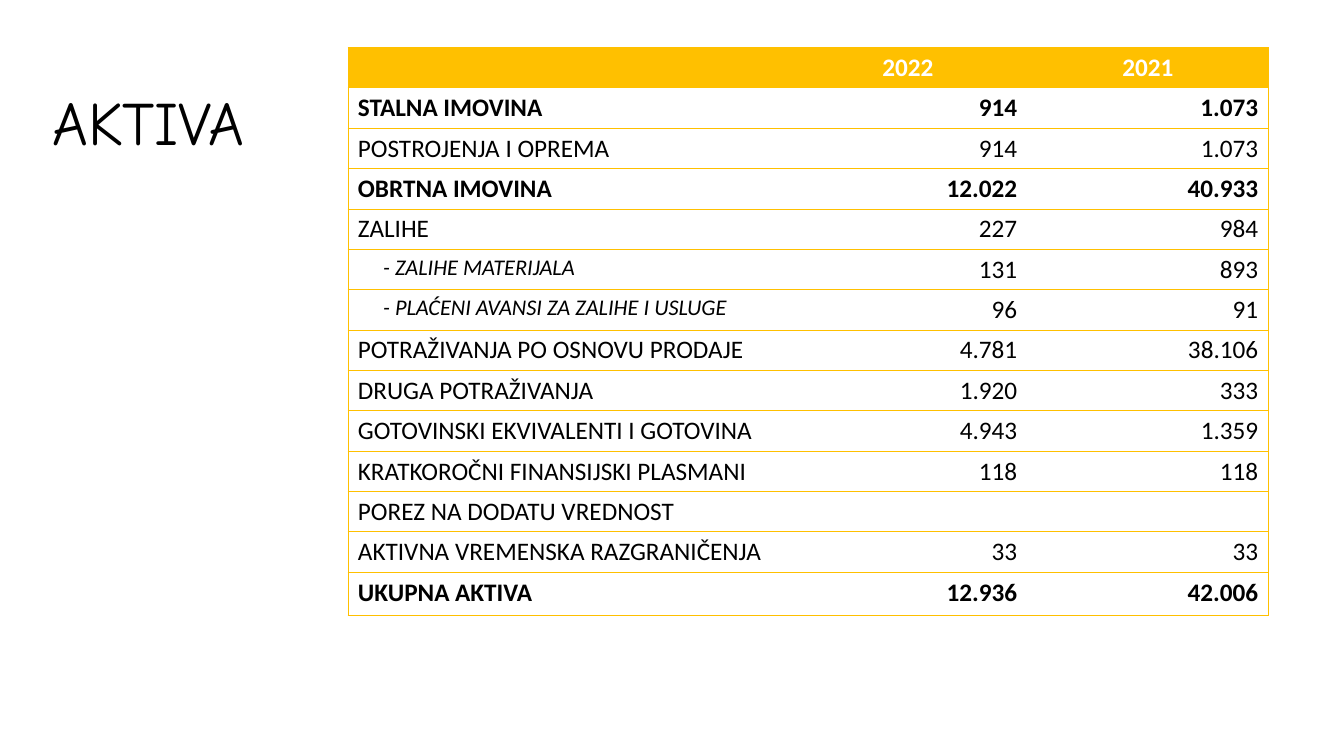
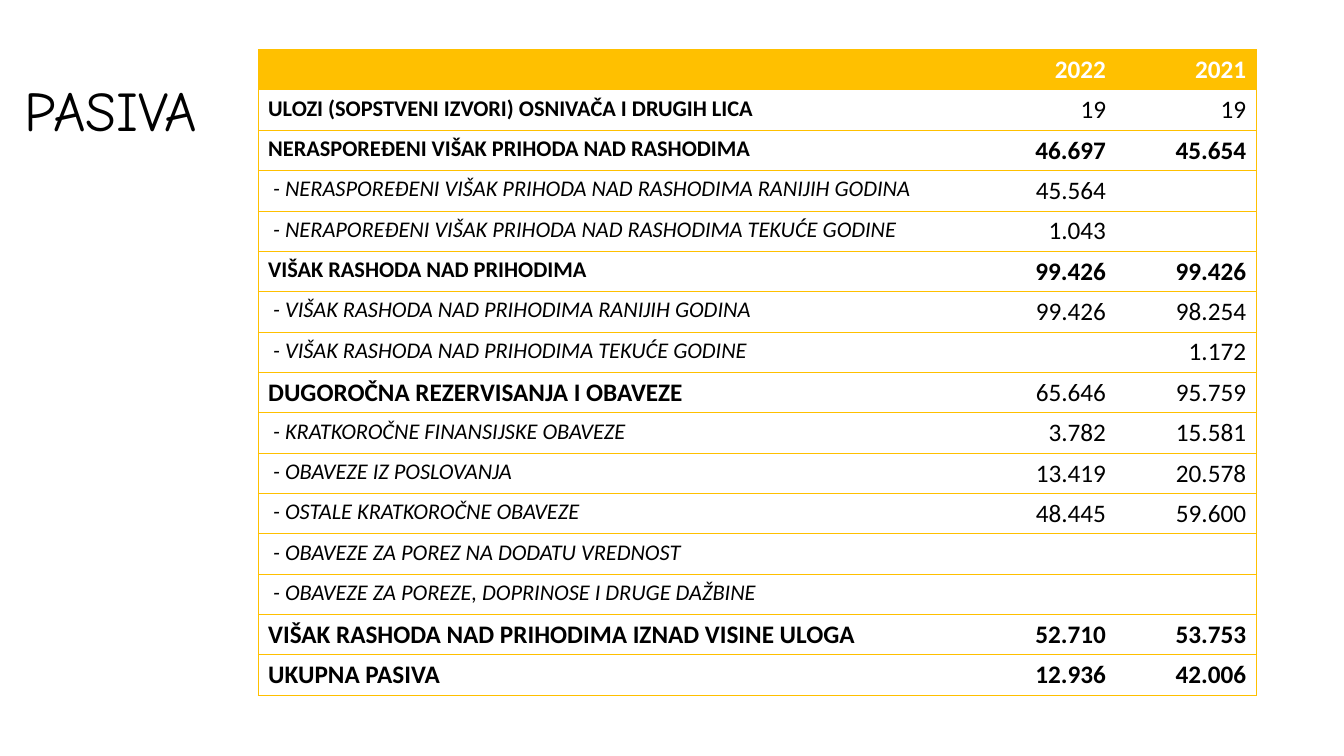
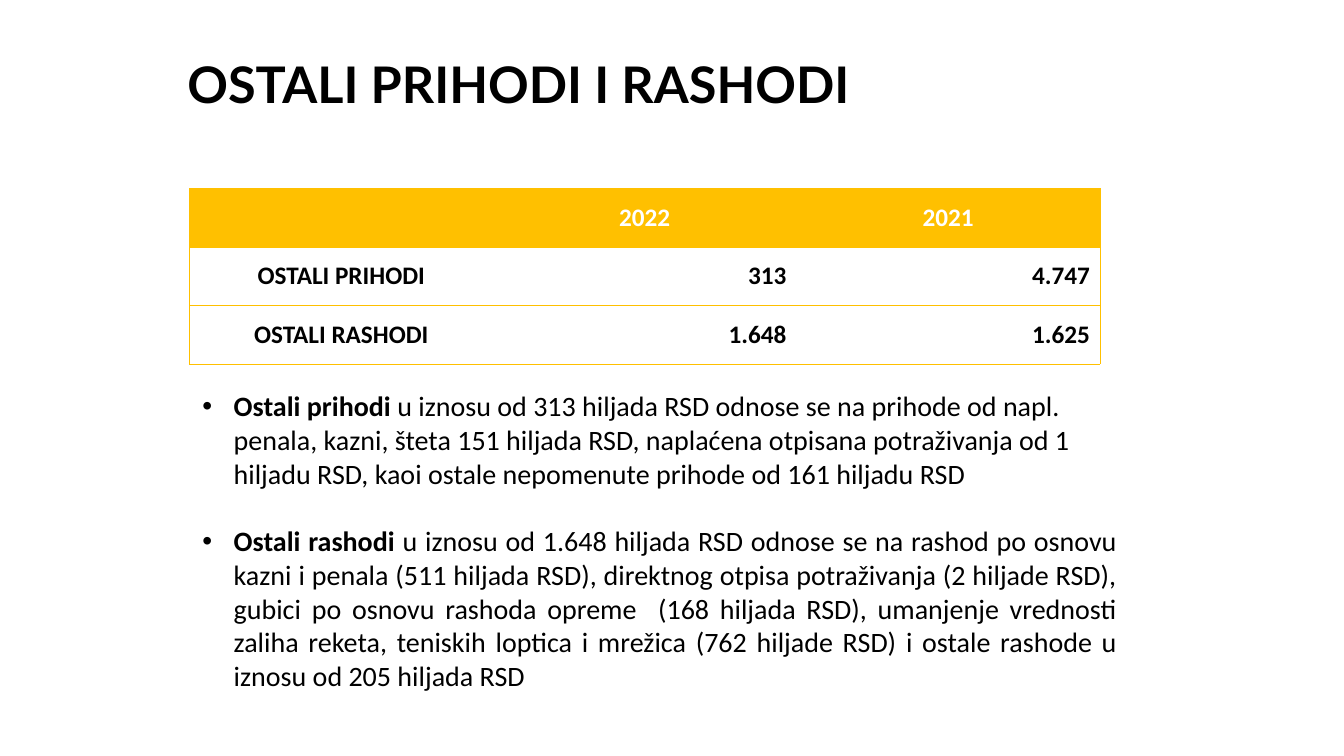
from lxml import etree
from pptx import Presentation
from pptx.dml.color import RGBColor
from pptx.enum.text import MSO_ANCHOR as ANCHOR, MSO_AUTO_SIZE as AUTO, PP_ALIGN as ALIGN
from pptx.oxml.ns import qn
from pptx.util import Inches, Pt

COLORS = {"gold": "FFC000", "white": "FFFFFF", "black": "000000"}
PLAIN_GRID = "{2D5ABB26-0587-4C30-8999-92F81FD0307C}"
BASE = {"name": "Calibri", "size": Pt(18), "bold": False, "italic": False}
BOLD = {"bold": True}
SMALL_BOLD = {"size": Pt(16), "bold": True}
SMALL_ITALIC = {"size": Pt(16), "italic": True}
STYLES = {
    "plain": ({}, {}),
    "total": (BOLD, BOLD),
    "heading": (BOLD, {}),
    "small total": (SMALL_BOLD, BOLD),
    "small heading": (SMALL_BOLD, {}),
    "sub": (SMALL_ITALIC, {}),
}

SLIDES = [
    {
        "title": ("AKTIVA", 0.42, 0.52, {"name": "Comic Neue", "size": Pt(44)}),
        "at": (3.45, 0.47), "cols": [4.37, 2.37, 2.39],
        "heights": [0.4] * 13 + [0.43], "indent": 0.25,
        "head": ALIGN.CENTER, "label": ALIGN.LEFT, "anchor": ANCHOR.TOP,
        "rows": [
            ("STALNA IMOVINA", "914", "1.073", "total"),
            ("POSTROJENJA I OPREMA", "914", "1.073", "plain"),
            ("OBRTNA IMOVINA", "12.022", "40.933", "total"),
            ("ZALIHE", "227", "984", "plain"),
            ("- ZALIHE MATERIJALA", "131", "893", "sub"),
            ("- PLAĆENI AVANSI ZA ZALIHE I USLUGE", "96", "91", "sub"),
            ("POTRAŽIVANJA PO OSNOVU PRODAJE", "4.781", "38.106", "plain"),
            ("DRUGA POTRAŽIVANJA", "1.920", "333", "plain"),
            ("GOTOVINSKI EKVIVALENTI I GOTOVINA", "4.943", "1.359", "plain"),
            ("KRATKOROČNI FINANSIJSKI PLASMANI", "118", "118", "plain"),
            ("POREZ NA DODATU VREDNOST", "", "", "plain"),
            ("AKTIVNA VREMENSKA RAZGRANIČENJA", "33", "33", "plain"),
            ("UKUPNA AKTIVA", "12.936", "42.006", "total"),
        ],
    },
    {
        "title": ("PASIVA", 0.14, 0.4, {"name": "Comic Neue", "size": Pt(40)}),
        "at": (2.56, 0.49), "cols": [6.98, 1.53, 1.39],
        "heights": [0.4] * 16, "indent": 0.05,
        "head": ALIGN.RIGHT, "label": ALIGN.LEFT, "anchor": ANCHOR.TOP,
        "rows": [
            ("ULOZI (SOPSTVENI IZVORI) OSNIVAČA I DRUGIH LICA", "19", "19", "small heading"),
            ("NERASPOREĐENI VIŠAK PRIHODA NAD RASHODIMA", "46.697", "45.654", "small total"),
            ("- NERASPOREĐENI VIŠAK PRIHODA NAD RASHODIMA RANIJIH GODINA", "45.564", "", "sub"),
            ("- NERAPOREĐENI VIŠAK PRIHODA NAD RASHODIMA TEKUĆE GODINE", "1.043", "", "sub"),
            ("VIŠAK RASHODA NAD PRIHODIMA", "99.426", "99.426", "small total"),
            ("- VIŠAK RASHODA NAD PRIHODIMA RANIJIH GODINA", "99.426", "98.254", "sub"),
            ("- VIŠAK RASHODA NAD PRIHODIMA TEKUĆE GODINE", "", "1.172", "sub"),
            ("DUGOROČNA REZERVISANJA I OBAVEZE", "65.646", "95.759", "heading"),
            ("- KRATKOROČNE FINANSIJSKE OBAVEZE", "3.782", "15.581", "sub"),
            ("- OBAVEZE IZ POSLOVANJA", "13.419", "20.578", "sub"),
            ("- OSTALE KRATKOROČNE OBAVEZE", "48.445", "59.600", "sub"),
            ("- OBAVEZE ZA POREZ NA DODATU VREDNOST", "", "", "sub"),
            ("- OBAVEZE ZA POREZE, DOPRINOSE I DRUGE DAŽBINE", "", "", "sub"),
            ("VIŠAK RASHODA NAD PRIHODIMA IZNAD VISINE ULOGA", "52.710", "53.753", "total"),
            ("UKUPNA PASIVA", "12.936", "42.006", "total"),
        ],
    },
    {
        "title": ("OSTALI PRIHODI I RASHODI", 1.76, 0.14,
                  {"name": "Lato", "size": Pt(36), "bold": True}),
        "at": (1.88, 1.87), "cols": [3.01] * 3,
        "heights": [0.58] * 3, "indent": 0,
        "head": ALIGN.CENTER, "label": ALIGN.CENTER, "anchor": ANCHOR.MIDDLE,
        "rows": [
            ("OSTALI PRIHODI", "313", "4.747", "total"),
            ("OSTALI RASHODI", "1.648", "1.625", "total"),
        ],
    },
]

NOTES = [
    ("Ostali prihodi",
     " u iznosu od 313 hiljada RSD odnose se na prihode od napl. penala, kazni, šteta "
     "151 hiljada RSD, naplaćena otpisana potraživanja od 1 hiljadu RSD, kaoi ostale "
     "nepomenute prihode od 161 hiljadu RSD", ALIGN.LEFT, 0),
    ("Ostali rashodi",
     " u iznosu od 1.648 hiljada RSD odnose se na rashod po osnovu kazni i penala "
     "(511 hiljada RSD), direktnog otpisa potraživanja (2 hiljade RSD), gubici po osnovu "
     "rashoda opreme  (168 hiljada RSD), umanjenje vrednosti zaliha reketa, teniskih "
     "loptica i mrežica (762 hiljade RSD) i ostale rashode u iznosu od 205 hiljada RSD",
     ALIGN.JUSTIFY, 24.4),
]


def write(p, text, fmt, color="black"):
    r = p.add_run()
    r.text = text
    for key, value in {**BASE, **fmt}.items():
        setattr(r.font, key, value)
    r.font.color.rgb = RGBColor.from_string(COLORS[color])


def add_borders(cell, sides):
    tcPr = cell._tc.get_or_add_tcPr()
    for i, side in enumerate(sides):
        ln = etree.Element(qn(f"a:ln{side}"), w=str(Pt(0.5)))
        fill = etree.SubElement(ln, qn("a:solidFill"))
        etree.SubElement(fill, qn("a:srgbClr"), val=COLORS["gold"])
        tcPr.insert(i, ln)


prs = Presentation()
prs.slide_width, prs.slide_height = Inches(13.33), Inches(7.5)

for data in SLIDES:
    s = prs.slides.add_slide(prs.slide_layouts[6])

    title, left, top, fmt = data["title"]
    sp = s.shapes.add_textbox(Inches(left), Inches(top), Inches(11.5), Inches(1.45))
    tf = sp.text_frame
    tf.word_wrap = True
    tf.vertical_anchor = ANCHOR.MIDDLE
    p = tf.paragraphs[0]
    p.line_spacing = 0.9
    write(p, title, fmt)

    rows = [("", "2022", "2021", "total")] + data["rows"]
    left, top = data["at"]
    sp = s.shapes.add_table(len(rows), 3, Inches(left), Inches(top),
                            Inches(sum(data["cols"])), Inches(sum(data["heights"])))
    table = sp.table
    table._tbl.tblPr.find(qn("a:tableStyleId")).text = PLAIN_GRID
    for column, width in zip(table.columns, data["cols"]):
        column.width = Inches(width)
    for i, (row, height) in enumerate(zip(rows, data["heights"])):
        table.rows[i].height = Inches(height)
        *texts, style = row
        label_fmt, value_fmt = STYLES[style]
        for j, text in enumerate(texts):
            cell = table.cell(i, j)
            cell.vertical_anchor = data["anchor"]
            if i == 0:
                cell.fill.solid()
                cell.fill.fore_color.rgb = RGBColor.from_string(COLORS["gold"])
            else:
                cell.fill.background()
            add_borders(cell, ["LTB", "TB", "RTB"][j])
            if style == "sub" and j == 0:
                cell.margin_left = Inches(0.1 + data["indent"])
            p = cell.text_frame.paragraphs[0]
            p.alignment = data["head"] if i == 0 else data["label"] if j == 0 else ALIGN.RIGHT
            if text:
                write(p, text, value_fmt if j else label_fmt, "black" if i else "white")

sp = s.shapes.add_textbox(Inches(1.91), Inches(3.81), Inches(9.27), Inches(3.13))
tf = sp.text_frame
tf.word_wrap = True
tf.auto_size = AUTO.SHAPE_TO_FIT_TEXT
for i, (lead, text, align, gap) in enumerate(NOTES):
    p = tf.add_paragraph() if i else tf.paragraphs[0]
    p.alignment = align
    p.space_before = Pt(gap)
    pPr = p._p.get_or_add_pPr()
    pPr.set("marL", str(Inches(0.31)))
    pPr.set("indent", str(Inches(-0.31)))
    etree.SubElement(pPr, qn("a:buFont"), typeface="Arial")
    etree.SubElement(pPr, qn("a:buChar"), char="•")
    write(p, lead, {"size": Pt(20), "bold": True})
    write(p, text, {"size": Pt(20)})

prs.save("out.pptx")
